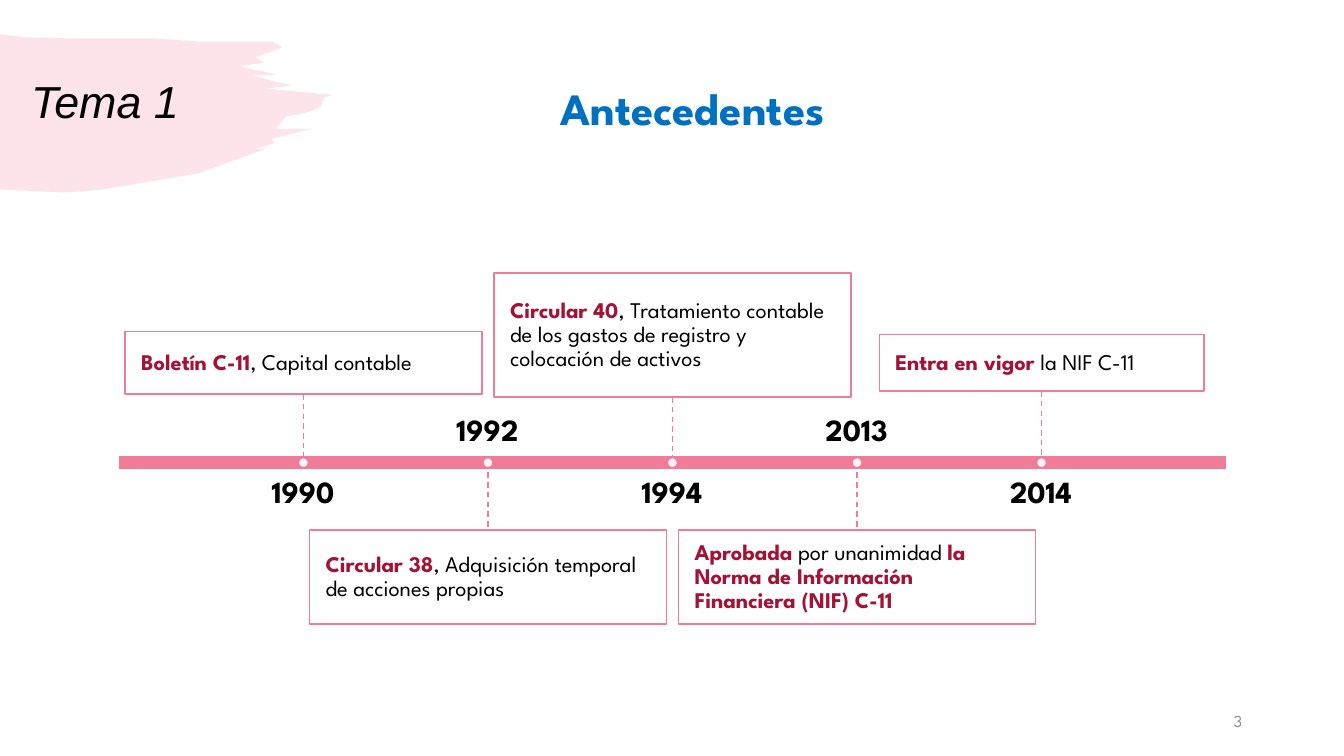
from lxml import etree
from pptx import Presentation
from pptx.dml.color import RGBColor
from pptx.enum.dml import MSO_LINE
from pptx.enum.shapes import MSO_CONNECTOR, MSO_SHAPE
from pptx.enum.text import MSO_ANCHOR as Anchor, PP_ALIGN as Align
from pptx.oxml.ns import qn
from pptx.util import Inches, Pt

COLORS = {"pink": "F07C98", "white": "FFFFFF", "wine": "A31336",
          "black": "000000", "blue": "0070C0", "gray": "8C8C8C"}
FONT = "League Spartan"

# Year, box top, width, height, vertical inset, text as (words, highlighted)
EVENTS = [
    ("1990", 3.29, 3.54, 0.62, 0.03,
     [("Boletín C-11", True), (", Capital contable", False)]),
    ("1992", 5.26, 3.54, 0.93, 0.05,
     [("Circular 38", True), (", Adquisición temporal de acciones propias", False)]),
    ("1994", 2.71, 3.54, 1.23, 0.07,
     [("Circular 40", True),
      (", Tratamiento contable de los gastos de registro y colocación de activos", False)]),
    ("2013", 5.26, 3.54, 0.93, 0.05,
     [("Aprobada", True), (" por unanimidad ", False),
      ("la Norma de Información Financiera (NIF) C-11", True)]),
    ("2014", 3.32, 3.22, 0.56, 0.03,
     [("Entra en vigor", True), (" la NIF C-11", False)]),
]
FIRST_X, STEP_X, AXIS_Y = 3.01, 1.83, 4.59
AXIS_HEIGHT, DOT = 0.15, 0.1

# Outline of the brush stroke, clockwise from the top left
BRUSH = [
    (0, 0.34), (0.25, 0.37), (0.66, 0.38), (1.51, 0.38), (1.94, 0.41), (2.7, 0.41),
    (2.8, 0.47), (2.53, 0.57), (2.62, 0.62), (2.38, 0.66), (2.75, 0.74),
    (2.51, 0.75), (2.73, 0.81), (2.9, 0.85), (2.63, 0.88), (3.3, 0.94),
    (3.21, 0.97), (3.18, 1.06), (3.07, 1.11), (2.83, 1.16), (2.74, 1.28),
    (3.08, 1.28), (2.69, 1.38), (2.73, 1.42), (2.52, 1.48), (2.63, 1.48),
    (1.97, 1.72), (1.02, 1.88), (0.65, 1.91), (0, 1.88),
]


def color(name):
    return RGBColor.from_string(COLORS[name])


def paint(shape, fill, line=None, alpha=100):
    shape.shadow.inherit = False
    shape.fill.solid()
    shape.fill.fore_color.rgb = color(fill)
    if alpha < 100:
        fill_color = shape._element.spPr.find(qn("a:solidFill"))[0]
        etree.SubElement(fill_color, qn("a:alpha")).set("val", str(alpha * 1000))
    if line:
        shape.line.color.rgb = color(line)
        shape.line.width = Pt(1)
    else:
        shape.line.fill.background()


def add_shape(kind, left, top, width, height, fill, line, alpha=100):
    shape = slide.shapes.add_shape(kind, *map(Inches, (left, top, width, height)))
    paint(shape, fill, line, alpha)
    return shape


def set_frame(shape, inset_x, inset_y, anchor):
    frame = shape.text_frame
    frame.word_wrap = True
    frame.vertical_anchor = anchor
    frame.margin_left = frame.margin_right = Inches(inset_x)
    frame.margin_top = frame.margin_bottom = Inches(inset_y)
    return frame.paragraphs[0]


def add_text(text, left, top, width, height, size, ink, align=Align.CENTER,
             anchor=Anchor.TOP, bold=False, italic=False, font=FONT,
             insets=(0.1, 0.05), spacing=1.0):
    box = slide.shapes.add_textbox(*map(Inches, (left, top, width, height)))
    paragraph = set_frame(box, *insets, anchor)
    paragraph.text = text
    paragraph.alignment = align
    paragraph.line_spacing = spacing
    paragraph.font.name, paragraph.font.size = font, Pt(size)
    paragraph.font.bold, paragraph.font.italic = bold, italic
    paragraph.font.color.rgb = color(ink)


def add_dashed_line(x, top, bottom):
    line = slide.shapes.add_connector(
        MSO_CONNECTOR.STRAIGHT, Inches(x), Inches(top), Inches(x), Inches(bottom))
    line.line.color.rgb = color("pink")
    line.line.width = Pt(1)
    line.line.dash_style = MSO_LINE.DASH
    etree.SubElement(line._element.spPr, qn("a:effectLst"))


def add_event(x, year, top, width, height, inset_y, words):
    above = top < AXIS_Y
    # Dashed link and description box
    add_dashed_line(x, *((top + height, AXIS_Y) if above else (AXIS_Y, top)))
    box = add_shape(MSO_SHAPE.RECTANGLE, x - width / 2, top, width, height,
                    "white", "pink", 90)
    paragraph = set_frame(box, 0.16, inset_y, Anchor.MIDDLE)
    paragraph.alignment = Align.LEFT
    paragraph.line_spacing = 0.9
    paragraph.font.name, paragraph.font.size = FONT, Pt(16)
    for text, highlighted in words:
        run = paragraph.add_run()
        run.text = text
        run.font.bold = highlighted
        run.font.color.rgb = color("wine" if highlighted else "black")
    # Year on the other side of the axis, and dot
    add_text(year, x - 1.47, 4.73 if above else 4.03, 2.93, 0.42, 22, "black",
             anchor=Anchor.TOP if above else Anchor.BOTTOM, bold=True,
             insets=(0, 0), spacing=0.9)
    add_shape(MSO_SHAPE.OVAL, x - DOT / 2, AXIS_Y - DOT / 2, DOT, DOT,
              "white", "pink", 90)


presentation = Presentation()
presentation.slide_width, presentation.slide_height = Inches(13.33), Inches(7.5)
slide = presentation.slides.add_slide(presentation.slide_layouts[6])

# Brush stroke
outline = [(Inches(x), Inches(y)) for x, y in BRUSH]
builder = slide.shapes.build_freeform(*outline[0])
builder.add_line_segments(outline[1:], close=True)
paint(builder.convert_to_shape(), "pink", alpha=20)

# Headings and page number
add_text("Tema 1", 0.21, 0.57, 2.53, 0.92, 32, "black", Align.LEFT, Anchor.MIDDLE,
         italic=True, font="Arial", spacing=0.9)
add_text("3", 9.42, 6.95, 3, 0.4, 12, "gray", Align.RIGHT, Anchor.MIDDLE)
add_text("Antecedentes", 4.97, 0.75, 3.8, 0.64, 32, "blue", bold=True)

# Timeline
add_shape(MSO_SHAPE.RECTANGLE, 1.17, AXIS_Y - AXIS_HEIGHT / 2, 11, AXIS_HEIGHT,
          "pink", "white")
for index, event in enumerate(EVENTS):
    add_event(FIRST_X + index * STEP_X, *event)

presentation.save("out.pptx")
